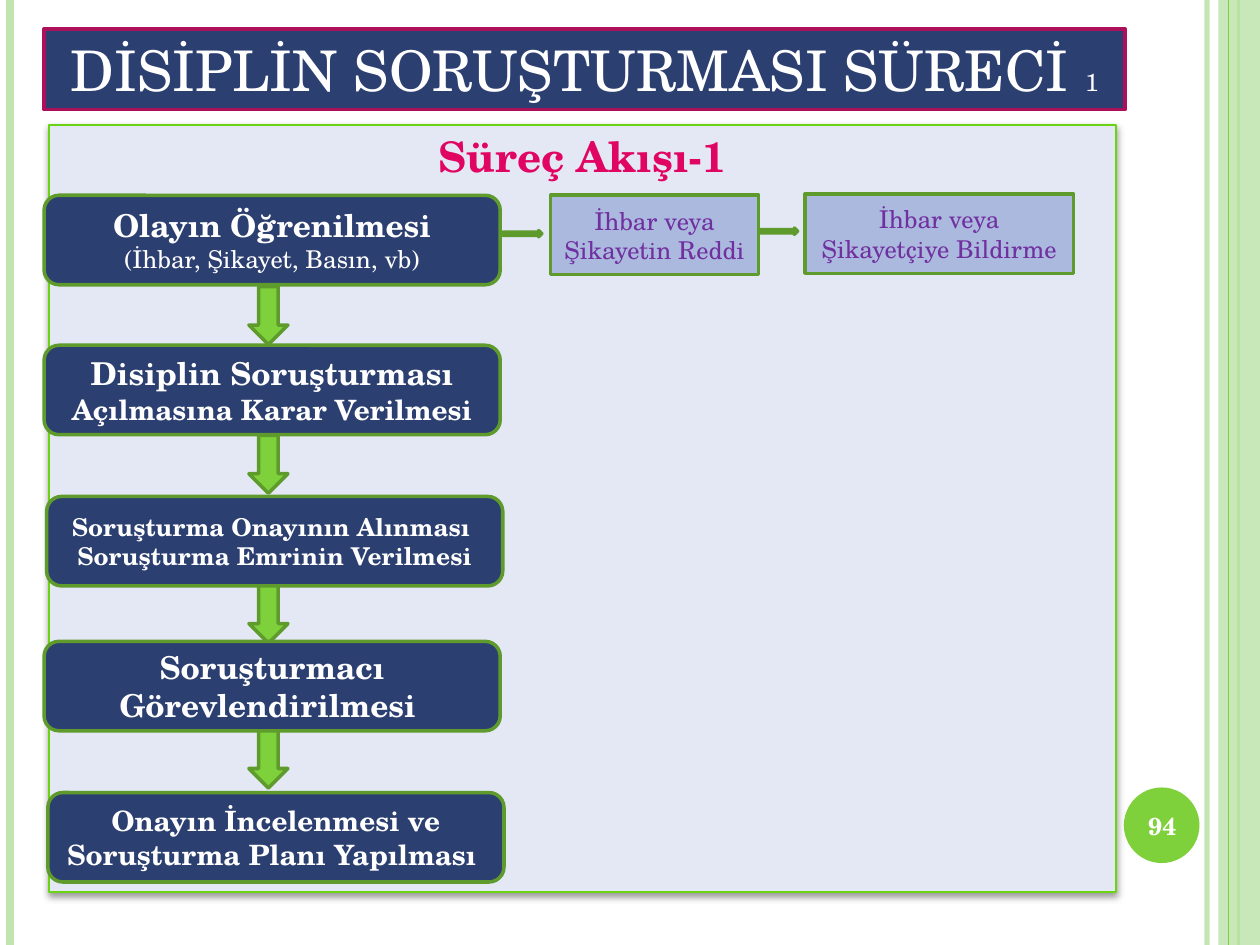
"""Build the disciplinary investigation process slide."""
from lxml import etree
from pptx import Presentation
from pptx import util as u
from pptx.dml.color import RGBColor
from pptx.enum import shapes, text
from pptx.oxml import parse_xml
from pptx.oxml.ns import nsdecls, qn

NAVY, PALE, GREEN, DARK_GREEN, MINT = "2C3F71", "ABB9DE", "7FD13B", "5E9B2C", "C0E5AF"
WHITE, PURPLE = "FFFFFF", "7030A0"
Kind = shapes.MSO_SHAPE
Anchor = text.MSO_ANCHOR


def paint(color_format, color, alpha=100):
    color_format.rgb = RGBColor.from_string(color)
    if alpha < 100:
        for node in color_format._xFill.iter(qn("a:srgbClr")):
            etree.SubElement(node, qn("a:alpha"), val=str(alpha * 1000))


def add_box(kind, place, fill=None, line=None, paragraphs=(), anchor=Anchor.MIDDLE, alpha=100):
    box = slide.shapes.add_shape(kind, *map(u.Inches, place))
    box.shadow.inherit = False
    if fill:
        box.fill.solid()
        paint(box.fill.fore_color, fill, alpha)
    else:
        box.fill.background()
    if line:
        paint(box.line.color, line[0])
        box.line.width = u.Pt(line[1])
    else:
        box.line.fill.background()
    frame = box.text_frame
    frame.word_wrap = True
    frame.vertical_anchor = anchor
    for index, runs in enumerate(paragraphs):
        paragraph = frame.add_paragraph() if index else frame.paragraphs[0]
        paragraph.alignment = text.PP_ALIGN.CENTER
        for words, size, bold, color in runs:
            run = paragraph.add_run()
            run.text = words
            paint(run.font.color, color)
            looks = {"name": "TeX Gyre Schola", "size": u.Pt(size), "bold": bold}
            for key, value in looks.items():
                setattr(run.font, key, value)
    return box


deck = Presentation()
deck.slide_width, deck.slide_height = u.Inches(10), u.Inches(7.5)
slide = deck.slides.add_slide(deck.slide_layouts[6])

stripes = [(9.58, MINT, 3, 93), (0.08, MINT, 4.5, 100), (9.83, GREEN, 1.5, 100), (9.75, GREEN, 0.75, 100)]
for x, color, width, alpha in stripes:
    if x == 9.75:
        add_box(Kind.RECTANGLE, (9.67, 0, 0.33, 7.5), MINT, alpha=87)
    stripe = slide.shapes.add_connector(
        shapes.MSO_CONNECTOR.STRAIGHT, u.Inches(x), u.Inches(0), u.Inches(x), u.Inches(7.5))
    stripe.line.fill.solid()
    paint(stripe.line.fill.fore_color, color, alpha)
    stripe.line.width = u.Pt(width)
    etree.SubElement(stripe._element.spPr, qn("a:effectLst"))

add_box(Kind.OVAL, (8.92, 6.25, 0.6, 0.6), GREEN)
add_box(Kind.RECTANGLE, (8.89, 6.27, 0.67, 0.57), paragraphs=[[("94", 14, True, WHITE)]])

add_box(Kind.RECTANGLE, (0.35, 0.23, 8.58, 0.64), NAVY, ("AD105A", 2),
        [[("DİSİPLİN SORUŞTURMASI SÜRECİ ", 32, False, WHITE), ("1", 14, False, WHITE)]], Anchor.TOP)

panel = add_box(Kind.RECTANGLE, (0.39, 0.99, 8.47, 6.09), "E3E8F4", ("6AD312", 1),
                [[("Süreç Akışı-1", 24, True, "E10563")]], Anchor.TOP)
panel._element.spPr.find(qn("a:effectLst")).append(parse_xml(
    f'<a:outerShdw {nsdecls("a")} blurRad="{u.Pt(4)}" dist="{u.Pt(2)}" dir="5400000" rotWithShape="0">'
    '<a:srgbClr val="000000"><a:alpha val="40000"/></a:srgbClr></a:outerShdw>'))

edge = (DARK_GREEN, 2)
for y in (2.35, 3.53, 4.72, 5.87):
    add_box(Kind.RIGHT_ARROW, (1.9, y, 0.46, 0.31), GREEN, edge).rotation = 90
for x, y in ((3.99, 1.83), (6.02, 1.81)):
    add_box(Kind.RIGHT_ARROW, (x, y, 0.31, 0.05), GREEN, edge)

stages = [
    (0.35, 1.55, [[("Olayın Öğrenilmesi", 18, True, WHITE)],
                  [("(İhbar, Şikayet, Basın, vb)", 14, False, WHITE)]]),
    (0.35, 2.74, [[("Disiplin Soruşturması ", 18, True, WHITE),
                   ("Açılmasına Karar Verilmesi", 16, True, WHITE)]]),
    (0.37, 3.94, [[("Soruşturma Onayının Alınması ", 14, True, WHITE)],
                  [("Soruşturma Emrinin Verilmesi", 14, True, WHITE)]]),
    (0.35, 5.09, [[("Soruşturmacı Görevlendirilmesi ", 18, True, WHITE)]]),
    (0.38, 6.29, [[("Onayın İncelenmesi ve Soruşturma Planı Yapılması ", 16, True, WHITE)]]),
]
for x, y, paragraphs in stages:
    add_box(Kind.ROUNDED_RECTANGLE, (x, y, 3.62, 0.71), NAVY, edge, paragraphs)

outcomes = [
    (4.37, 1.55, 1.65, "İhbar veya Şikayetin Reddi"),
    (6.39, 1.54, 2.13, "İhbar veya Şikayetçiye Bildirme"),
]
for x, y, width, words in outcomes:
    add_box(Kind.RECTANGLE, (x, y, width, 0.63), PALE, edge, [[(words, 14, False, PURPLE)]])

deck.save("out.pptx")
